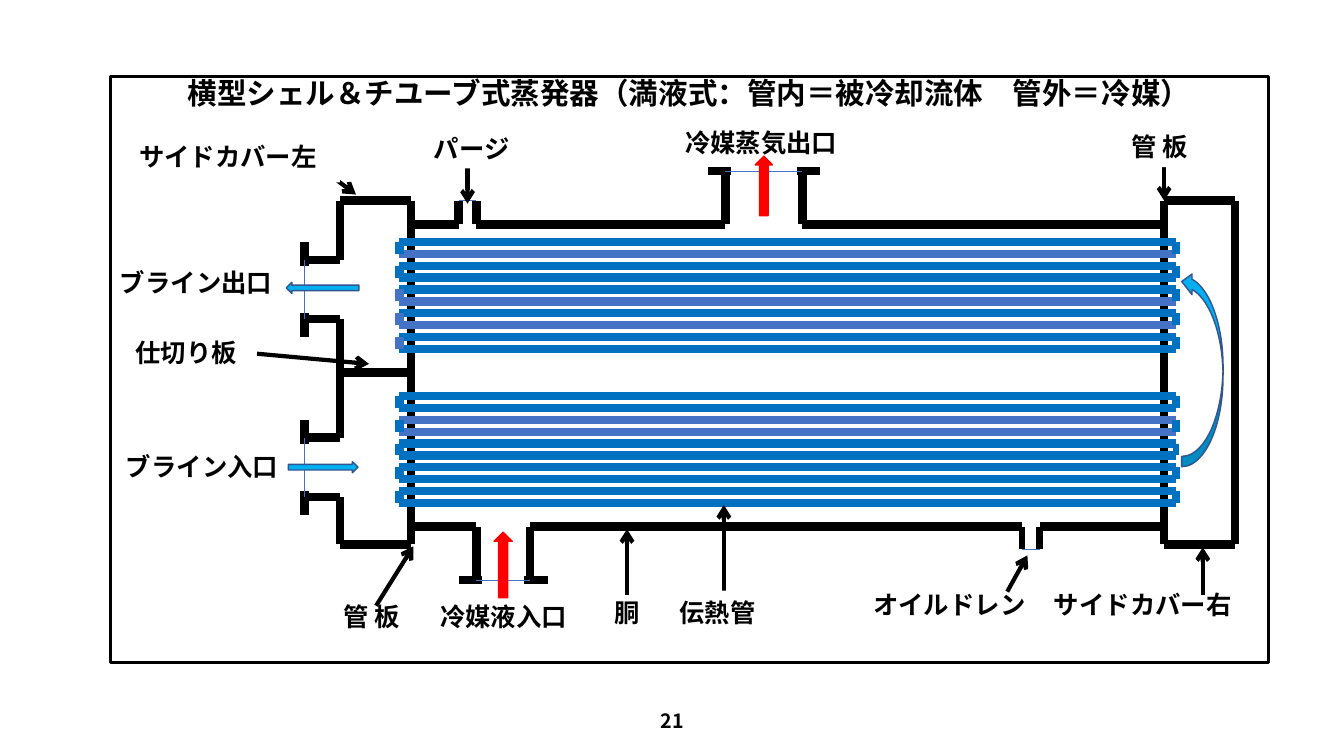
import itertools
import pptx
import pptx.dml.color
import pptx.enum.shapes
import pptx.enum.text
import pptx.oxml
import pptx.oxml.ns
import pptx.util

Kind = pptx.enum.shapes.MSO_SHAPE
Anchor = pptx.enum.text.MSO_ANCHOR
qn = pptx.oxml.ns.qn

THEME = {
    "font": "Noto Sans CJK JP",
    "title": 21.1, "label": 18.1, "page": 14,
    "wall": 6, "drain": 4.5, "arrow": 3, "frame": 2.25, "edge": 1, "thin": 0.5,
    "black": "000000", "white": "FFFFFF", "tube": "0070C0", "steel": "4472C4",
    "brine": "00B0F0", "rim": "325491", "red": "FF0000",
}
# Grid: one tube pitch per cell, origin at the brine flange and cover top
PITCH, LEFT, TOP = 0.1176, 3.02, 1.99

deck = pptx.Presentation()
deck.slide_width = pptx.util.Inches(13.33)
deck.slide_height = pptx.util.Inches(7.5)
slide = deck.slides.add_slide(deck.slide_layouts[5])
shapes = slide.shapes
hue = {k: pptx.dml.color.RGBColor.from_string(v)
       for k, v in THEME.items() if isinstance(v, str) and k != "font"}


def grid(col, row, *size):
    """Turn columns and rows into slide lengths."""
    spots = [LEFT + col * PITCH, TOP + row * PITCH] + [n * PITCH for n in size]
    return [pptx.util.Inches(n) for n in spots]


def write(box, words, size="label", anchor=Anchor.MIDDLE, space=1.0):
    frame = box.text_frame
    frame.word_wrap = True
    frame.auto_size = pptx.enum.text.MSO_AUTO_SIZE.NONE
    frame.vertical_anchor = anchor
    para = frame.paragraphs[0]
    para.alignment = pptx.enum.text.PP_ALIGN.CENTER
    para.line_spacing = space
    run = para.add_run()
    run.text = words
    run.font.size = pptx.util.Pt(THEME[size])
    run.font.bold = True
    run.font.name = THEME["font"]
    run.font.color.rgb = hue["black"]
    east = pptx.oxml.parse_xml(
        f'<a:ea {pptx.oxml.ns.nsdecls("a")} typeface="{THEME["font"]}"/>')
    run.font._element.find(qn("a:latin")).addnext(east)


# Title in the framed panel
title = shapes.title
title.left, title.top, title.width, title.height = grid(-16.33, -10.46, 97.62, 49.4)
title.line.color.rgb = hue["black"]
title.line.width = pptx.util.Pt(THEME["frame"])
write(title, "横型シェル＆チユーブ式蒸発器（満液式：管内＝被冷却流体　管外＝冷媒）",
      size="title", anchor=Anchor.TOP, space=0.8)

# Walls of the covers, shell and nozzles
walls = [
    [(9, 0), (3, 0), (3, 5), (0, 5)],
    [(0, 10), (3, 10), (3, 20), (0, 20)],
    [(0, 25), (3, 25), (3, 29), (9, 29)],
    [(3, 14.5), (9, 14.5)],
    [(9, 0), (9, 29)],
    [(72.5, 0), (72.5, 29)],
    [(72.5, 0), (78.5, 0), (78.5, 29), (72.5, 29)],
    [(9, 2), (13, 2), (13, 0)],
    [(14.5, 0), (14.5, 2), (35.5, 2), (35.5, -2.5)],
    [(42, -2.5), (42, 2), (72.5, 2)],
    [(9, 27.5), (14.5, 27.5), (14.5, 32)],
    [(19, 32), (19, 27.5), (60.5, 27.5)],
    [(62, 27.5), (72.5, 27.5)],
]
# Flanges
walls += [[(0, row), (0, row + 2)] for row in (3.5, 9.5, 18.5, 24.5)]
walls += [[(col, row), (col + 2, row)]
          for col, row in ((34, -2.5), (41.5, -2.5), (13, 32), (18.5, 32))]
# Nozzle mouths and drain legs
mouths = [[(0, 5), (0, 10)], [(0, 20), (0, 25)], [(14.5, 32), (19, 32)],
          [(35.5, -2.5), (42, -2.5)], [(60.5, 29.4), (62, 29.4)], [(13, 0), (14.5, 0)]]
drain = [[(col, 27.5), (col, 29.4)] for col in (60.5, 62)]

# Each line: start, end, colour, width, arrowhead
lines = [(*leg, "black", "wall", False)
         for wall in walls for leg in itertools.pairwise(wall)]
lines += [(*leg, "steel", "thin", False) for leg in mouths]
lines += [(*leg, "black", "drain", False) for leg in drain]

# Two passes of ten tubes, joined in pairs by bends
for first in (3.5, 16.5):
    for n in range(10):
        row = first + n
        tint = "steel" if row in (4.5, 8.5, 10.5, 18.5, 19.5) else "tube"
        lines.append(((8, row), (73.5, row), tint, "wall", False))
    for row in (first + 2 * n for n in range(5)):
        tint = "steel" if row in (7.5, 9.5, 11.5) else "tube"
        width = "drain" if row == 20.5 else "wall"
        lines.append(((8, row), (8, row + 1), tint, "wall", False))
        lines.append(((73.5, row), (73.5, row + 1), "tube", width, False))

# Pointers from the labels
lines += [(*leg, "black", "arrow", True) for leg in (
    ((1.28, -2.81), (4.34, -0.51)),
    ((72.5, -2.89), (72.5, 0)),
    ((-4, 12.92), (5.44, 13.78)),
    ((35.37, 33.67), (35.37, 25.68)),
    ((13.75, -3.32), (13.75, 0.26)),
    ((27.2, 33.25), (27.2, 27.72)),
    ((6.04, 34.18), (9.18, 29.17)),
    ((59.27, 32.99), (60.97, 29.93)),
    ((75.76, 33.25), (75.76, 29.25)),
)]

# Labels: words, place, white ground
labels = [
    ("ブライン出口", (-16.84, 4.42, 15.39, 5.02), False),
    ("ブライン入口", (-16.33, 19.9, 15.39, 5.02), False),
    ("仕切り板", (-15.9, 10.29, 11.82, 5.02), True),
    ("冷媒液入口", (9.69, 33.25, 14.2, 3.66), True),
    ("冷媒蒸気出口", (28.83, -6.55, 19.39, 3.32), True),
    ("管 板", (67.26, -6.38, 9.78, 3.57), True),
    ("胴", (24.57, 32.91, 5.36, 3.66), True),
    ("伝熱管", (30.19, 32.91, 9.27, 3.66), True),
    ("管 板", (0.77, 33.25, 9.78, 3.57), True),
    ("サイドカバー左", (-15.9, -5.95, 18.88, 4.42), True),
    ("サイドカバー右", (62.07, 32.4, 17.26, 3.32), True),
    ("パージ", (9.52, -6.04, 9.18, 3.32), True),
    ("オイルドレン", (45.75, 31.97, 17.26, 4.17), True),
]

# Flow arrows: kind, place, fill, line, turn
flows = [
    (Kind.CURVED_RIGHT_ARROW, (73.98, 5.95, 3.49, 16.5), "brine", "rim", 180),
    (Kind.RIGHT_ARROW, (-1.36, 22.02, 5.87, 0.94), "brine", "rim", 0),
    (Kind.LEFT_ARROW, (-1.53, 6.89, 6.12, 0.94), "brine", "rim", 0),
    (Kind.UP_ARROW, (15.99, 27.98, 1.53, 5.53), "red", "red", 0),
    (Kind.UP_ARROW, (38.01, -3.74, 1.45, 5.02), "red", "red", 0),
]

# Draw the lines; the last four pointers lie above the labels
late = lines[-4:]
for group in (lines[:-4], late):
    if group is late:
        for words, place, ground in labels:
            box = shapes.add_textbox(*grid(*place))
            if ground:
                box.fill.solid()
                box.fill.fore_color.rgb = hue["white"]
            write(box, words)
    for start, end, tint, width, head in group:
        line = shapes.add_connector(pptx.enum.shapes.MSO_CONNECTOR.STRAIGHT,
                                    *grid(*start), *grid(*end))
        line.line.color.rgb = hue[tint]
        line.line.width = pptx.util.Pt(THEME[width])
        props = line._element.spPr
        if head:
            tip = props.find(qn("a:ln")).makeelement(qn("a:tailEnd"), {"type": "arrow"})
            props.find(qn("a:ln")).append(tip)
        props.append(props.makeelement(qn("a:effectLst"), {}))

for kind, place, fill, edge, turn in flows:
    flow = shapes.add_shape(kind, *grid(*place))
    flow.shadow.inherit = False
    flow.fill.solid()
    flow.fill.fore_color.rgb = hue[fill]
    flow.line.color.rgb = hue[edge]
    flow.line.width = pptx.util.Pt(THEME["edge"])
    flow.rotation = turn

# Page number
write(shapes.add_textbox(*grid(11.9, 42.18, 38.27, 3.4)), "21", size="page")

deck.save("out.pptx")
